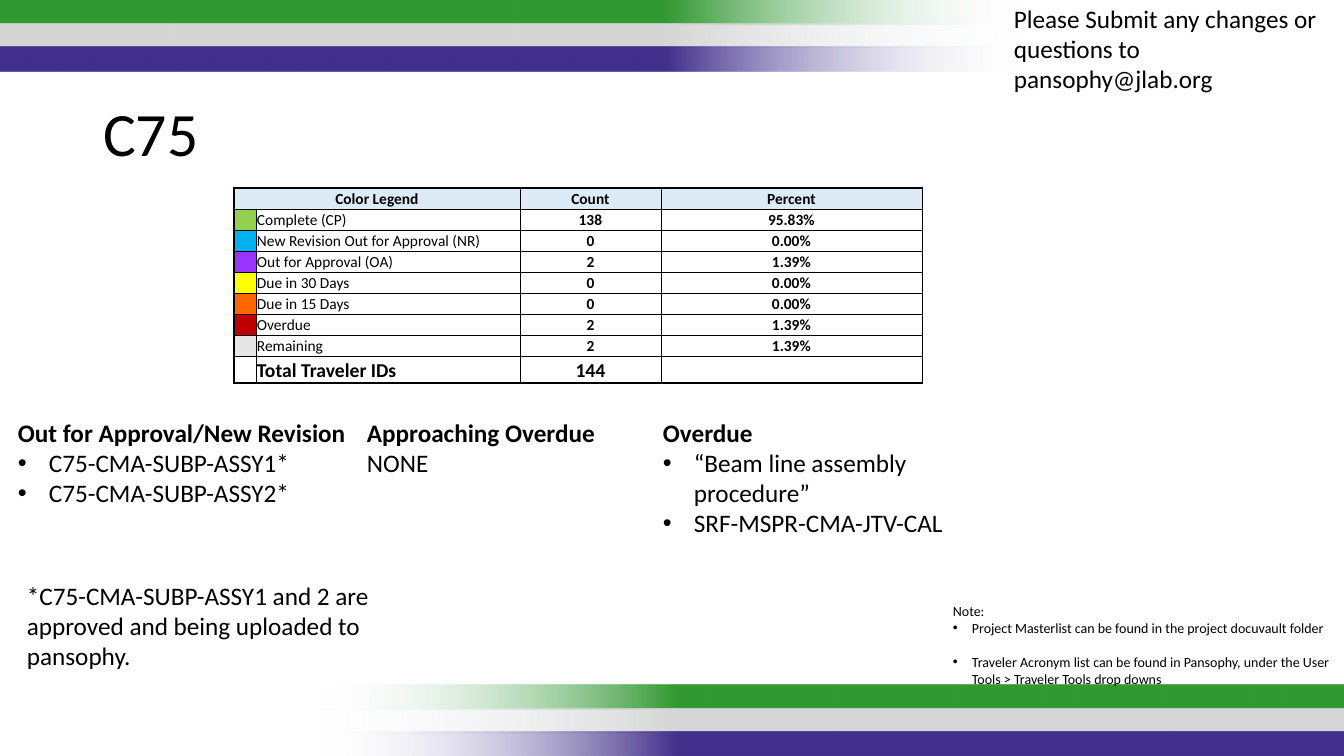
from lxml.etree import SubElement
from pptx import Presentation
from pptx.dml.color import RGBColor
from pptx.enum.shapes import MSO_SHAPE
from pptx.enum.text import MSO_ANCHOR, MSO_AUTO_SIZE, PP_ALIGN
from pptx.oxml.ns import qn
from pptx.util import Pt

SCALE = 914400 / 100.8
FONT = "Calibri"
HUES = {
    "ink": "000000", "fade": "F7FAFD", "head": "DDEBF7",
    "green": "339933", "gray": "D6D6D6", "blue": "42318C",
    "done": "92D050", "new": "00B0F0", "out": "9933FF", "month": "FFFF00",
    "weeks": "FF6600", "late": "C00000", "rest": "E7E6E6",
}


def px(n):
    return round(n * SCALE)


def tag(parent, name, **attrs):
    node = SubElement(parent, qn("a:" + name))
    for key, value in attrs.items():
        node.set(key, str(value))
    return node


def write(para, text, size=18, bold=False, align=PP_ALIGN.LEFT, indent=0, before=0):
    """Fill one paragraph; a non-zero indent in px makes it a bullet."""
    para.alignment = align
    if before:
        para.space_before = Pt(before)
    if indent:
        props = para._p.get_or_add_pPr()
        props.set("marL", str(px(indent)))
        props.set("indent", str(-px(indent)))
        tag(props, "buFont", typeface="Arial")
        tag(props, "buChar", char="•")
    if not text:
        tag(para._p, "endParaRPr", sz=size * 100)
        return
    run = para.add_run()
    run.text = text
    run.font.size, run.font.bold, run.font.name = Pt(size), bold, FONT
    run.font.color.rgb = RGBColor.from_string(HUES["ink"])


class Page:
    def __init__(self, deck):
        self.slide = deck.slides.add_slide(deck.slide_layouts[5])
        self.shapes = self.slide.shapes

    def bar(self, x, y, hue, turn):
        bar = self.shapes.add_shape(
            MSO_SHAPE.RECTANGLE, px(x), px(y), px(1025), px(24))
        bar.shadow.inherit = False
        bar.rotation = turn
        bar.line.fill.background()
        bar.fill.gradient()
        bar.fill.gradient_angle = 0
        stops = bar._element.spPr.find(qn("a:gradFill")).find(qn("a:gsLst"))
        for stop in list(stops):
            stops.remove(stop)
        for pos, name in ((0, "fade"), (35, hue), (100, hue)):
            color = tag(tag(stops, "gs", pos=pos * 1000), "srgbClr", val=HUES[name])
            if name == "fade":
                tag(color, "alpha", val=0)

    def title(self, text, x, y, w, h):
        box = self.shapes.title
        box.left, box.top, box.width, box.height = map(px, (x, y, w, h))
        frame = box.text_frame
        frame.vertical_anchor = MSO_ANCHOR.MIDDLE
        frame.paragraphs[0].line_spacing = 0.9
        write(frame.paragraphs[0], text, size=44)

    def text(self, x, y, w, h, lines, cols=1):
        """Each line is a pair of text and format."""
        frame = self.shapes.add_textbox(px(x), px(y), px(w), px(h)).text_frame
        frame.word_wrap = True
        frame.auto_size = MSO_AUTO_SIZE.SHAPE_TO_FIT_TEXT
        if cols > 1:
            frame._txBody.bodyPr.set("numCol", str(cols))
        for i, (line, style) in enumerate(lines):
            para = frame.add_paragraph() if i else frame.paragraphs[0]
            write(para, line, **style)

    def cell(self, cell, text, hue, edges, **style):
        cell.margin_left = cell.margin_right = cell.margin_top = px(1)
        cell.margin_bottom = 0
        cell.vertical_anchor = MSO_ANCHOR.BOTTOM
        write(cell.text_frame.paragraphs[0], text, **style)
        props = cell._tc.get_or_add_tcPr()
        for side, width in edges.items():
            line = tag(props, "ln" + side, w=Pt(width))
            tag(tag(line, "solidFill"), "srgbClr", val=HUES["ink"])
        if hue:
            cell.fill.solid()
            cell.fill.fore_color.rgb = RGBColor.from_string(HUES[hue])
        else:
            cell.fill.background()

    def table(self, x, y, widths, heights, rows):
        """Each row is a swatch hue and its three texts."""
        grid = self.shapes.add_table(
            len(rows), len(widths), px(x), px(y),
            px(sum(widths)), px(sum(heights))).table
        grid.first_row = grid.horz_banding = False
        for col, width in zip(grid.columns, widths):
            col.width = px(width)
        for row, height in zip(grid.rows, heights):
            row.height = px(height)
        grid.cell(0, 0).merge(grid.cell(0, 1))
        last = len(rows) - 1
        for r, (hue, *texts) in enumerate(rows):
            texts = [texts[0], "", *texts[1:]] if r == 0 else ["", *texts]
            for c, text in enumerate(texts):
                edges = {"L": 0.5 if c else 1, "R": 0.5,
                         "T": 0.5 if r else 1, "B": 1 if r == last else 0.5}
                left = r > 0 and c < 2
                self.cell(
                    grid.cell(r, c), text, hue if r == 0 or c == 0 else None, edges,
                    size=14 if r == last else 11,
                    bold=not left or r == last,
                    align=PP_ALIGN.LEFT if left else PP_ALIGN.CENTER)


def main():
    deck = Presentation()
    deck.slide_width, deck.slide_height = px(1344), px(756)
    page = Page(deck)

    # Bands at the top and bottom
    for i, hue in enumerate(("green", "gray", "blue")):
        page.bar(-1, round(i * 23.5), hue, 180)
        page.bar(320, 685 + round(i * 23.5), hue, 0)

    page.title("C75", 93, 87, 1159, 100)

    # Status counts
    page.table(234, 188, (22, 264, 141, 261), [21] * 8 + [27], [
        ("head", "Color Legend", "Count", "Percent"),
        ("done", "Complete (CP)", "138", "95.83%"),
        ("new", "New Revision Out for Approval (NR)", "0", "0.00%"),
        ("out", "Out for Approval (OA)", "2", "1.39%"),
        ("month", "Due in 30 Days", "0", "0.00%"),
        ("weeks", "Due in 15 Days", "0", "0.00%"),
        ("late", "Overdue", "2", "1.39%"),
        ("rest", "Remaining", "2", "1.39%"),
        (None, "Total Traveler IDs", "144", ""),
    ])

    # Three lists under the table
    head, item, plain = {"bold": True}, {"indent": 31}, {}
    page.text(8, 412, 348, 102, [
        ("Out for Approval/New Revision", head),
        ("C75-CMA-SUBP-ASSY1*", item),
        ("C75-CMA-SUBP-ASSY2*", item)])
    page.text(357, 412, 297, 72, [("Approaching Overdue", head), ("NONE", plain)])
    page.text(653, 412, 608, 132, [
        ("Overdue", head),
        ("“Beam line assembly procedure”", item),
        ("SRF-MSPR-CMA-JTV-CAL", item)], cols=2)

    # Contact and notes
    page.text(1004, -2, 341, 102, [
        ("Please Submit any changes or questions to pansophy@jlab.org", plain)])
    page.text(943, 598, 400, 95, [
        ("Note:", {"size": 10}),
        ("Project Masterlist can be found in the project docuvault folder",
         {"size": 10, "indent": 19}),
        ("Traveler Acronym list can be found in Pansophy, under the User "
         "Tools > Traveler Tools drop downs",
         {"size": 10, "indent": 19, "before": 12})])
    page.text(17, 575, 407, 102, [
        ("*C75-CMA-SUBP-ASSY1 and 2 are approved and being uploaded to pansophy.",
         plain)])

    deck.save("out.pptx")


if __name__ == "__main__":
    main()
